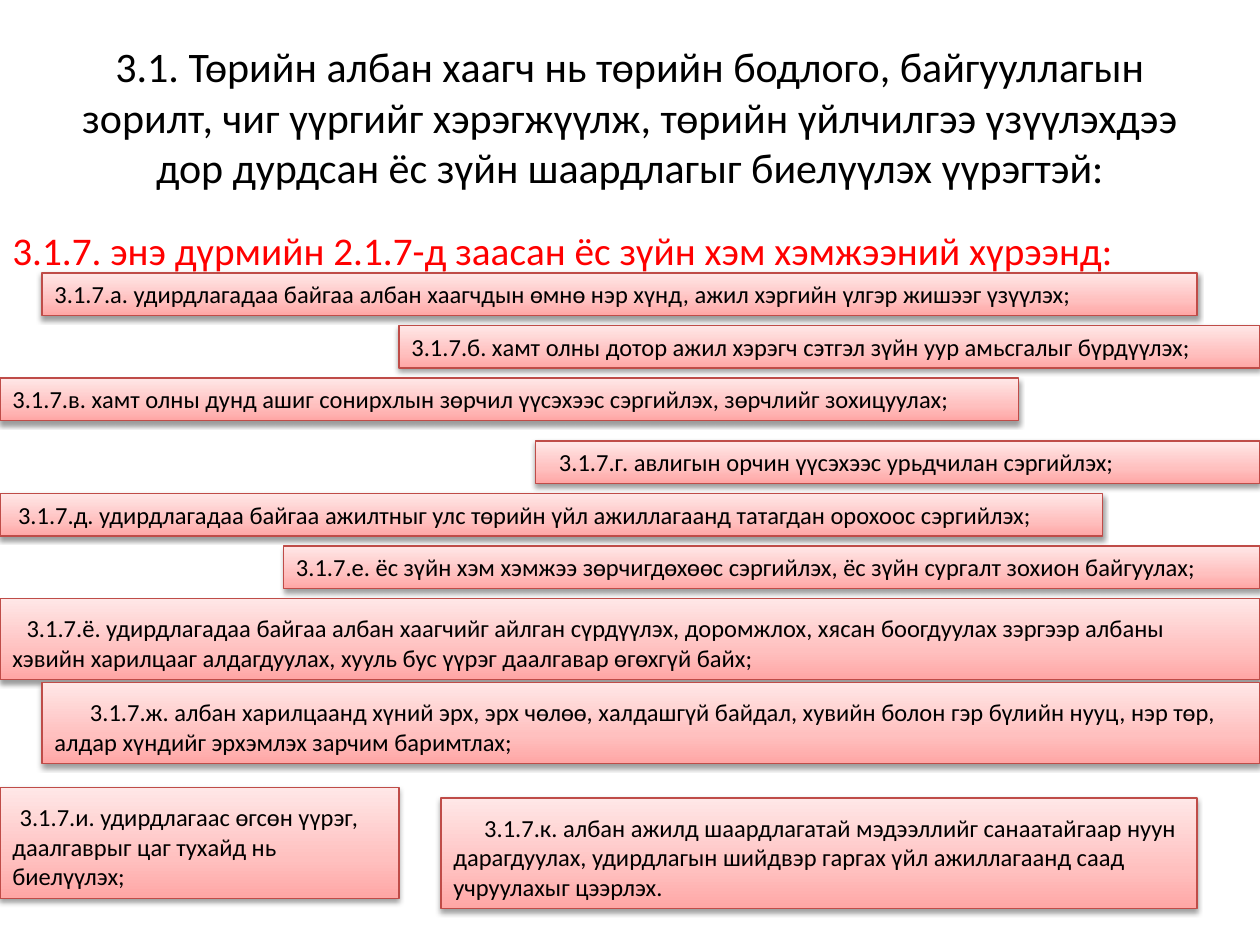
from lxml import etree
from pptx import Presentation
from pptx.dml.color import RGBColor
from pptx.enum.shapes import MSO_SHAPE
from pptx.enum.text import MSO_ANCHOR, PP_ALIGN
from pptx.oxml import parse_xml
from pptx.oxml.ns import qn
from pptx.util import Pt

RECTANGLE = MSO_SHAPE.RECTANGLE
TOP, MIDDLE = MSO_ANCHOR.TOP, MSO_ANCHOR.MIDDLE
LEFT, CENTER = PP_ALIGN.LEFT, PP_ALIGN.CENTER

BLACK = RGBColor(0x00, 0x00, 0x00)
RED = RGBColor(0xFF, 0x00, 0x00)
BORDER = RGBColor(0xBF, 0x4C, 0x48)
PINK_STOPS = [
    (0, RGBColor(0xFF, 0xA6, 0xA5)),
    (35, RGBColor(0xFF, 0xC0, 0xBF)),
    (100, RGBColor(0xFF, 0xE7, 0xE7)),
]
FONT = "Calibri"
DRAWING_NS = "http://schemas.openxmlformats.org/drawingml/2006/main"

SLIDE_WIDTH, SLIDE_HEIGHT = 720, 540
SIDE_INSET, TOP_INSET = 7.2, 3.6
LINE_HEIGHT = 17.1
TALL_FIRST_LINE = 4.8

TITLE = (
    "3.1. Төрийн албан хаагч нь төрийн бодлого, байгууллагын зорилт, чиг үүргийг "
    "хэрэгжүүлж, төрийн үйлчилгээ үзүүлэхдээ дор дурдсан ёс зүйн шаардлагыг "
    "биелүүлэх үүрэгтэй:"
)
HEADING = "3.1.7. энэ дүрмийн 2.1.7-д заасан ёс зүйн хэм хэмжээний хүрээнд:"

SHORT_RULES = [
    (24, 156, 660, 0, "3.1.7.а. удирдлагадаа байгаа албан хаагчдын өмнө нэр хүнд, ажил хэргийн үлгэр жишээг үзүүлэх;"),
    (228, 186, 492, 0, "3.1.7.б. хамт олны дотор ажил хэрэгч сэтгэл зүйн уур амьсгалыг бүрдүүлэх;"),
    (0, 216, 582, 0, "3.1.7.в. хамт олны дунд ашиг сонирхлын зөрчил үүсэхээс сэргийлэх, зөрчлийг зохицуулах;"),
    (306, 252, 414, 6.3, "3.1.7.г. авлигын орчин үүсэхээс урьдчилан сэргийлэх;"),
    (0, 282, 630, 3.2, "3.1.7.д. удирдлагадаа байгаа ажилтныг улс төрийн үйл ажиллагаанд татагдан орохоос сэргийлэх;"),
    (162, 312, 558, 0, "3.1.7.е. ёс зүйн хэм хэмжээ зөрчигдөхөөс сэргийлэх, ёс зүйн сургалт зохион байгуулах;"),
]
LONG_RULES = [
    (0, 342, 720, 2, 8.1, 18,
     "3.1.7.ё. удирдлагадаа байгаа албан хаагчийг айлган сүрдүүлэх, доромжлох, хясан боогдуулах "
     "зэргээр албаны хэвийн харилцааг алдагдуулах, хууль бус үүрэг даалгавар өгөхгүй байх;"),
    (24, 390, 696, 2, 20.3, SIDE_INSET,
     "3.1.7.ж. албан харилцаанд хүний эрх, эрх чөлөө, халдашгүй байдал, хувийн болон гэр бүлийн "
     "нууц, нэр төр, алдар хүндийг эрхэмлэх зарчим баримтлах;"),
    (0, 450, 228, 3, 4.1, SIDE_INSET,
     "3.1.7.и. удирдлагаас өгсөн үүрэг, даалгаврыг цаг тухайд нь биелүүлэх;"),
    (252, 456, 432, 3, 17.6, SIDE_INSET,
     "3.1.7.к. албан ажилд шаардлагатай мэдээллийг санаатайгаар нуун\n"
     "дарагдуулах, удирдлагын шийдвэр гаргах үйл ажиллагаанд саад\n"
     "учруулахыг цээрлэх."),
]


def write_text(frame, text, size, color, align=LEFT, anchor=TOP):
    frame.text = text
    frame.word_wrap = True
    frame.vertical_anchor = anchor
    for paragraph in frame.paragraphs:
        paragraph.alignment = align
        for run in paragraph.runs:
            run.font.name = FONT
            run.font.size = Pt(size)
            run.font.color.rgb = color


def add_caption(slide, left, top, width, height, text, size, color, align, anchor):
    caption = slide.shapes.add_textbox(Pt(left), Pt(top), Pt(width), Pt(height))
    write_text(caption.text_frame, text, size, color, align, anchor)


def apply_pink_gradient(bar):
    stops = "".join(
        f'<a:gs pos="{position * 1000}"><a:srgbClr val="{color}"/></a:gs>'
        for position, color in PINK_STOPS
    )
    gradient = parse_xml(
        f'<a:gradFill xmlns:a="{DRAWING_NS}" rotWithShape="1"><a:gsLst>{stops}</a:gsLst>'
        '<a:lin ang="16200000" scaled="0"/></a:gradFill>'
    )
    bar.element.spPr.find(qn("a:prstGeom")).addnext(gradient)


def apply_soft_shadow(bar):
    bar.shadow.inherit = False
    effects = bar.element.spPr.find(qn("a:effectLst"))
    shadow = etree.SubElement(
        effects, qn("a:outerShdw"), blurRad=str(Pt(3.1)), dist=str(Pt(1.6)),
        dir="5400000", rotWithShape="0",
    )
    color = etree.SubElement(shadow, qn("a:srgbClr"), val=str(BLACK))
    etree.SubElement(color, qn("a:alpha"), val="38000")


def add_rule(slide, left, top, width, lines, indent, text, extra_top=0, right_inset=SIDE_INSET):
    height = 2 * TOP_INSET + lines * LINE_HEIGHT + extra_top
    bar = slide.shapes.add_shape(RECTANGLE, Pt(left), Pt(top), Pt(width), Pt(height))
    bar.line.color.rgb = BORDER
    bar.line.width = Pt(0.75)
    apply_pink_gradient(bar)
    apply_soft_shadow(bar)
    frame = bar.text_frame
    frame.margin_left, frame.margin_right = Pt(SIDE_INSET), Pt(right_inset)
    frame.margin_top, frame.margin_bottom = Pt(TOP_INSET + extra_top), Pt(TOP_INSET)
    write_text(frame, text, 14, BLACK)
    if indent:
        first_properties = frame.paragraphs[0]._p.get_or_add_pPr()
        first_properties.set("indent", str(Pt(indent)))


def main():
    presentation = Presentation()
    presentation.slide_width = Pt(SLIDE_WIDTH)
    presentation.slide_height = Pt(SLIDE_HEIGHT)
    slide = presentation.slides.add_slide(presentation.slide_layouts[6])
    add_caption(slide, 36, 21.6, 648, 90, TITLE, 24, BLACK, CENTER, MIDDLE)
    add_caption(slide, 0, 126, 684, 42, HEADING, 22.4, RED, LEFT, TOP)
    for left, top, width, indent, text in SHORT_RULES:
        add_rule(slide, left, top, width, 1, indent, text)
    for left, top, width, lines, indent, right_inset, text in LONG_RULES:
        add_rule(slide, left, top, width, lines, indent, text, TALL_FIRST_LINE, right_inset)
    presentation.save("out.pptx")


if __name__ == "__main__":
    main()
